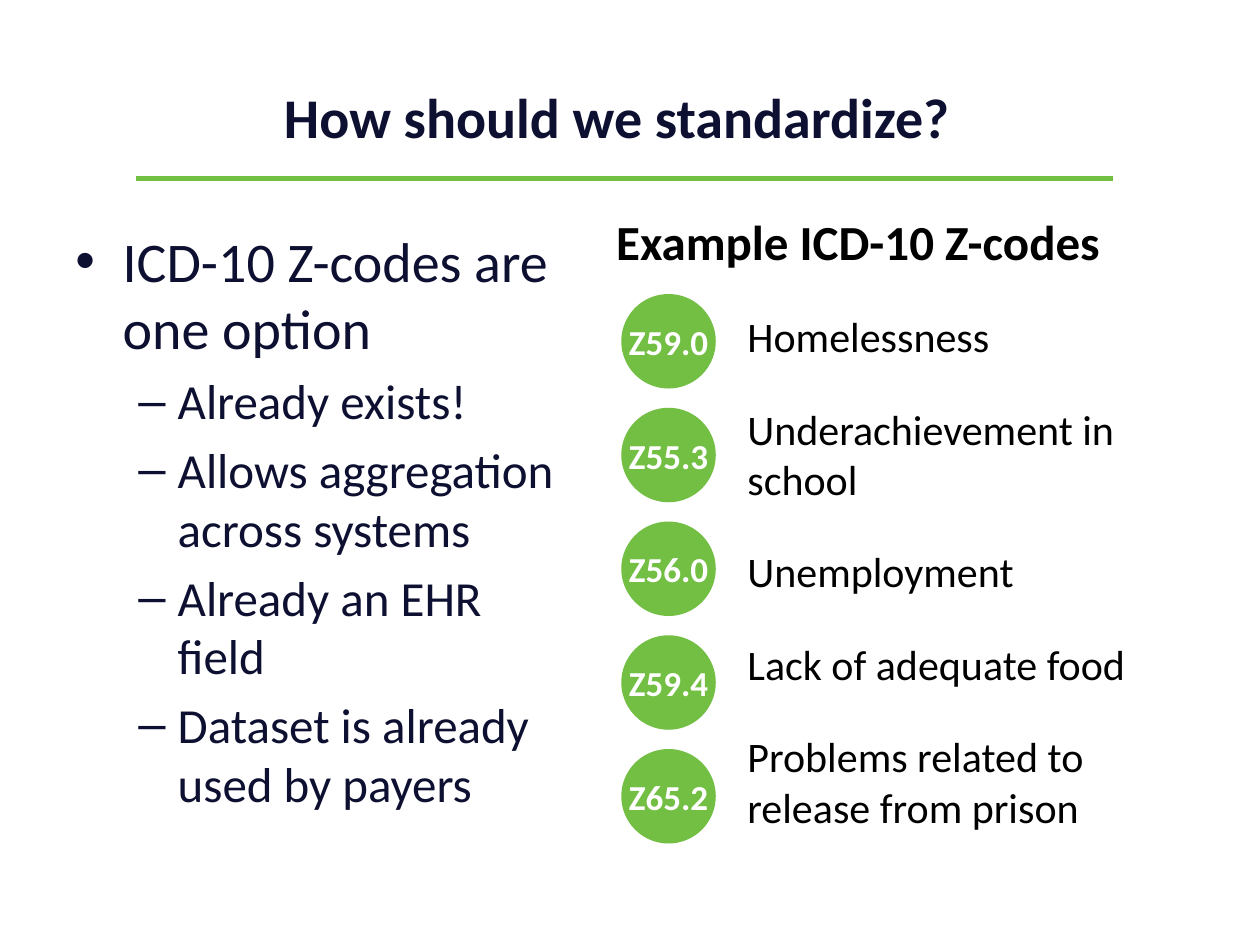
from lxml import etree
from pptx import Presentation
from pptx.dml.color import RGBColor
from pptx.enum import shapes, text
from pptx.oxml import ns
from pptx.util import Pt

NAVY = RGBColor(0x0E, 0x10, 0x32)
GREEN = RGBColor(0x72, 0xBF, 0x44)
BLACK = RGBColor(0, 0, 0)
WHITE = RGBColor(255, 255, 255)

OPTION_POINTS = [
    "Already exists!",
    "Allows aggregation across systems",
    "Already an EHR field",
    "Dataset is already used by payers",
]
Z_CODES = {
    "Z59.0": "Homelessness",
    "Z55.3": "Underachievement in school",
    "Z56.0": "Unemployment",
    "Z59.4": "Lack of adequate food",
    "Z65.2": "Problems related to release from prison",
}
CODE_TOP, CODE_PITCH, CODE_SIZE = 168, 65, 54


def format_paragraph(paragraph, content, size, color, bold=False):
    """Fill a paragraph and set its font."""
    paragraph.text = content
    font = paragraph.font
    font.name, font.size, font.bold = "Calibri", Pt(size), bold
    font.color.rgb = color


def place(shape, left, top, width, height):
    """Move and size a shape, in points."""
    shape.left, shape.top = Pt(left), Pt(top)
    shape.width, shape.height = Pt(width), Pt(height)


def add_title(slide, content):
    """Format the title placeholder."""
    title = slide.shapes.title
    place(title, 36, 21.6, 648, 90)
    frame = title.text_frame
    frame.auto_size = text.MSO_AUTO_SIZE.NONE
    frame.vertical_anchor = text.MSO_ANCHOR.MIDDLE
    frame.margin_right = Pt(22)
    format_paragraph(frame.paragraphs[0], content, 32, NAVY, True)
    frame.paragraphs[0].alignment = text.PP_ALIGN.CENTER


def add_rule(slide, left, right, top):
    """Draw the green line under the title."""
    rule = slide.shapes.add_connector(
        shapes.MSO_CONNECTOR.STRAIGHT, Pt(left), Pt(top), Pt(right), Pt(top))
    rule.line.color.rgb = GREEN
    rule.line.width = Pt(3)
    etree.SubElement(rule._element.spPr, ns.qn("a:effectLst"))


def add_text(slide, box, lines, size, bold=False, space_after=0):
    """Add a wrapped text box with one black paragraph per line."""
    frame = slide.shapes.add_textbox(*map(Pt, box)).text_frame
    frame.word_wrap = True
    for index, line in enumerate(lines):
        paragraph = frame.add_paragraph() if index else frame.paragraphs[0]
        format_paragraph(paragraph, line, size, BLACK, bold)
        paragraph.space_after = Pt(space_after)


def format_bullet(paragraph, content, level):
    """Format a bulleted paragraph of the given level."""
    mark, size, margin, hanging = [("•", 32, 27, 27), ("–", 28, 58.5, 22.5)][level]
    paragraph.level = level
    properties = paragraph._p.get_or_add_pPr()
    properties.set("marL", str(Pt(margin)))
    properties.set("indent", str(-Pt(hanging)))
    etree.SubElement(properties, ns.qn("a:buFont"), typeface="Arial")
    etree.SubElement(properties, ns.qn("a:buChar"), char=mark)
    format_paragraph(paragraph, content, size, NAVY)
    paragraph.space_before = Pt(size * 0.2)


def add_bullets(slide, box, heading, points):
    """Add a bulleted heading with its sub-points."""
    frame = slide.shapes.add_textbox(*map(Pt, box)).text_frame
    frame.word_wrap = True
    format_bullet(frame.paragraphs[0], heading, 0)
    for point in points:
        format_bullet(frame.add_paragraph(), point, 1)


def add_code(slide, left, top, code):
    """Add a green circle holding a code."""
    circle = slide.shapes.add_shape(
        shapes.MSO_SHAPE.OVAL, Pt(left), Pt(top), Pt(CODE_SIZE), Pt(CODE_SIZE))
    circle.shadow.inherit = False
    circle.fill.solid()
    circle.fill.fore_color.rgb = GREEN
    circle.line.fill.background()
    frame = circle.text_frame
    frame.margin_left = frame.margin_right = 0
    frame.margin_top = frame.margin_bottom = 0
    frame.word_wrap = False
    frame.vertical_anchor = text.MSO_ANCHOR.MIDDLE
    format_paragraph(frame.paragraphs[0], code, 20, WHITE, True)
    frame.paragraphs[0].alignment = text.PP_ALIGN.CENTER


def main():
    """Build the slide and save it."""
    presentation = Presentation()
    presentation.slide_width, presentation.slide_height = Pt(720), Pt(540)
    slide = presentation.slides.add_slide(presentation.slide_layouts[5])
    add_title(slide, "How should we standardize?")
    add_bullets(slide, (36, 126, 294, 396), "ICD-10 Z-codes are one option", OPTION_POINTS)
    add_rule(slide, 78, 636, 102)
    add_text(slide, (345, 117.5, 378, 41), ["Example ICD-10 Z-codes"], 28, bold=True)
    for index, code in enumerate(Z_CODES):
        add_code(slide, 355, CODE_TOP + index * CODE_PITCH, code)
    add_text(slide, (420, 174, 276, 307.5), Z_CODES.values(), 24, space_after=24)
    presentation.save("out.pptx")


if __name__ == "__main__":
    main()
